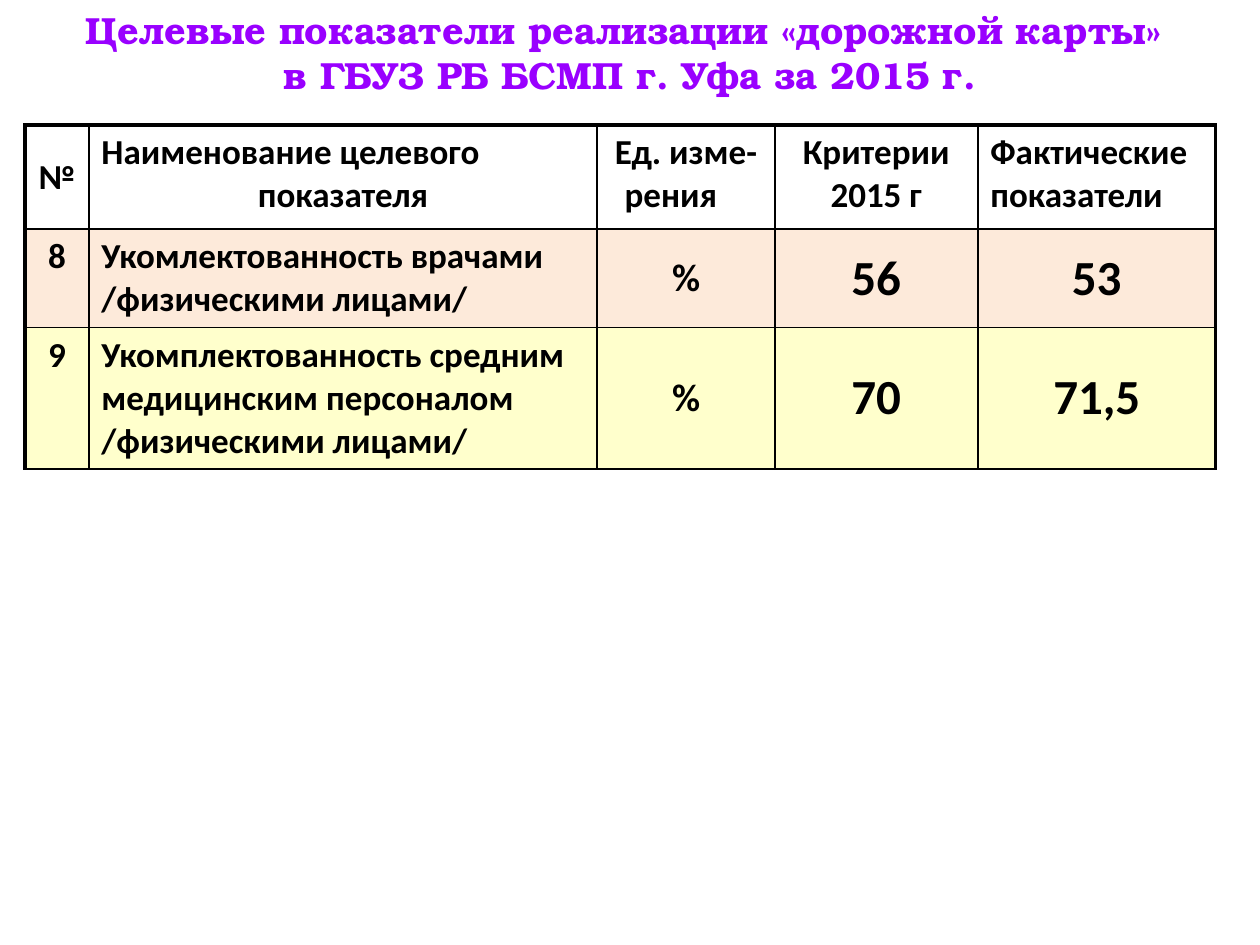
"""Build a slide with a table of target indicators for 2015."""
from pptx import Presentation
from pptx import util as u
from pptx.dml.color import RGBColor
from pptx.enum import text
from pptx.oxml import parse_xml
from pptx.oxml.ns import nsdecls

LEFT, CENTER = text.PP_ALIGN.LEFT, text.PP_ALIGN.CENTER
TOP, MIDDLE = text.MSO_ANCHOR.TOP, text.MSO_ANCHOR.MIDDLE

TITLE = "Целевые показатели реализации «дорожной карты» \vв ГБУЗ РБ БСМП г. Уфа за 2015 г."
HEADER = [
    (["№"], {"align": CENTER, "anchor": MIDDLE}),
    (["Наименование целевого", "показателя"], {"align": [LEFT, CENTER]}),
    (["Ед. изме-", "рения"], {"align": [CENTER, LEFT], "indents": [0, 8.5]}),
    (["Критерии 2015 г"], {"align": CENTER}),
    (["Фактические", "показатели"], {}),
]
RECORDS = [
    ("8", ["Укомлектованность врачами", "/физическими лицами/"], "%", "56", "53"),
    ("9", ["Укомплектованность средним медицинским персоналом /физическими лицами/"],
     "%", "70", "71,5"),
]
ROW_FILLS = ["FFFFFF", "FDEADA", "FFFFCC"]
COLUMN_WIDTHS = [36.5, 290.5, 101.5, 116, 136]
ROW_HEIGHTS = [59.5, 56, 80]
THIN, THICK = 1, 2.25


def rgb(value):
    return RGBColor.from_string(value)


def write(frame, lines, size=20, font="Calibri", color="000000", align=LEFT, indents=None):
    """Fill a text frame with one bold paragraph per line."""
    aligns = align if isinstance(align, list) else [align] * len(lines)
    indents = indents or [0] * len(lines)
    for index, (line, side, indent) in enumerate(zip(lines, aligns, indents)):
        para = frame.paragraphs[0] if index == 0 else frame.add_paragraph()
        para.text = line
        para.alignment = side
        if indent:
            para._p.get_or_add_pPr().set("marL", str(u.Pt(indent)))
        for span in para.runs:
            span.font.name, span.font.size, span.font.bold = font, u.Pt(size), True
            span.font.color.rgb = rgb(color)


def add_borders(cell, **widths):
    """Draw black cell borders of the given widths, in the order L, R, T, B."""
    properties = cell._tc.get_or_add_tcPr()
    for side, width in widths.items():
        properties.append(parse_xml(
            f'<a:ln{side} {nsdecls("a")} w="{u.Pt(width)}"><a:solidFill>'
            f'<a:srgbClr val="000000"/></a:solidFill></a:ln{side}>'))


def record_row(number, name, unit, target, actual):
    """Give each field of a record its format."""
    middle = {"align": CENTER, "anchor": MIDDLE}
    return [([number], {"align": CENTER}), (name, {}), ([unit], {**middle, "size": 22}),
            ([target], {**middle, "size": 28}), ([actual], {**middle, "size": 28})]


def fill_cell(cell, lines, anchor=TOP, **style):
    cell.vertical_anchor = anchor
    write(cell.text_frame, lines, **style)


def main():
    deck = Presentation()
    deck.slide_width, deck.slide_height = u.Pt(720), u.Pt(540)
    page = deck.slides.add_slide(deck.slide_layouts[5])

    title = page.shapes.title
    title.left, title.top, title.width, title.height = u.Pt(0), u.Pt(-0.7), u.Pt(720), u.Pt(61)
    title.text_frame.vertical_anchor = MIDDLE
    write(title.text_frame, [TITLE], size=21.6, font="TeX Gyre Bonum",
          color="9900FF", align=CENTER)

    rows = [HEADER] + [record_row(*record) for record in RECORDS]
    table = page.shapes.add_table(
        len(rows), len(COLUMN_WIDTHS), u.Pt(14.3), u.Pt(71.5),
        u.Pt(sum(COLUMN_WIDTHS)), u.Pt(sum(ROW_HEIGHTS))).table
    for column, width in zip(table.columns, COLUMN_WIDTHS):
        column.width = u.Pt(width)
    last = len(COLUMN_WIDTHS) - 1
    for r, (row, height, color) in enumerate(zip(rows, ROW_HEIGHTS, ROW_FILLS)):
        table.rows[r].height = u.Pt(height)
        for c, (lines, style) in enumerate(row):
            cell = table.cell(r, c)
            fill_cell(cell, lines, **style)
            add_borders(cell, L=THICK if c == 0 else THIN, R=THICK if c == last else THIN,
                        T=THICK if r == 0 else THIN, B=THIN)
            cell.fill.solid()
            cell.fill.fore_color.rgb = rgb(color)

    deck.save("out.pptx")


if __name__ == "__main__":
    main()
